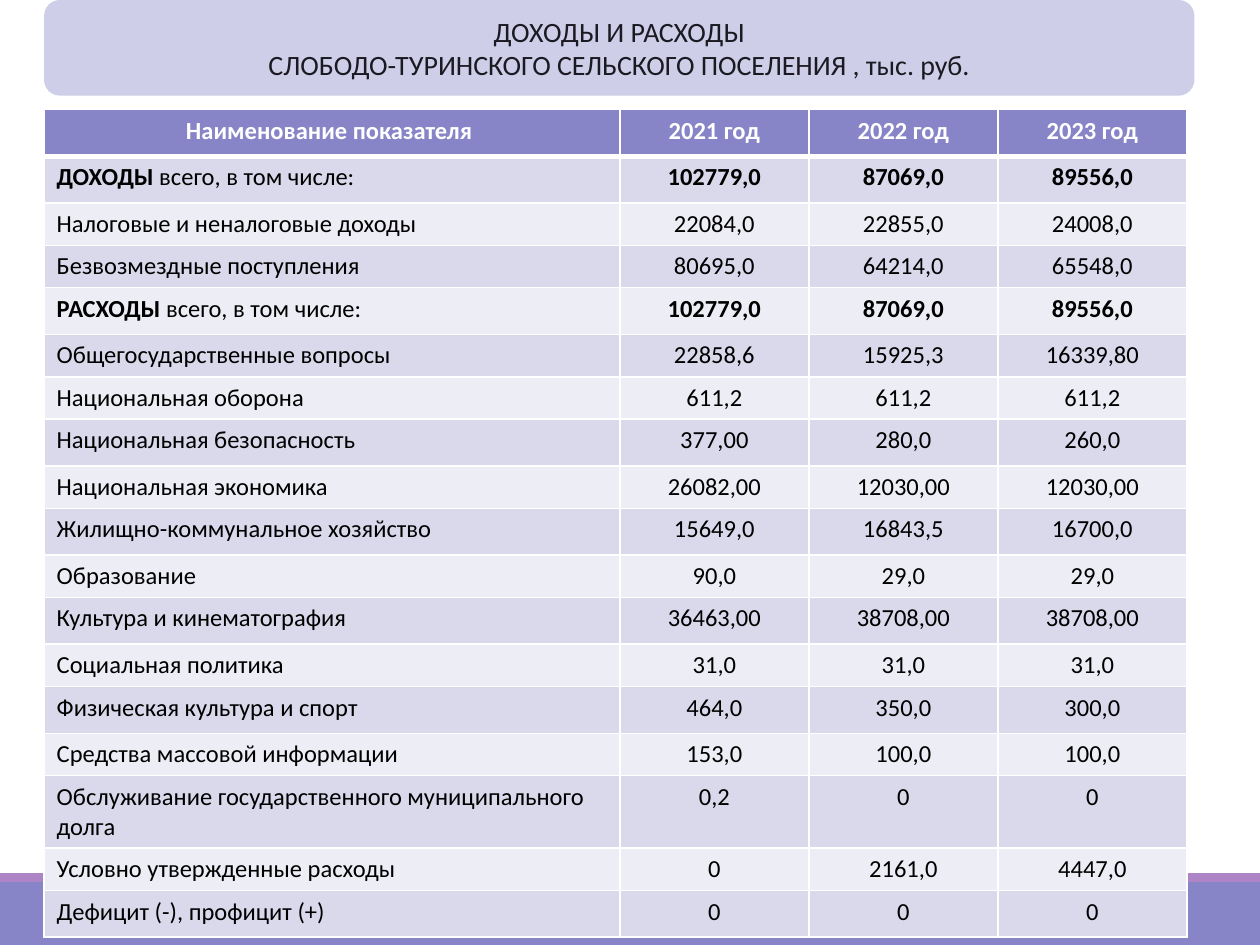
from dataclasses import dataclass
from lxml.etree import SubElement
from pptx import Presentation
from pptx.dml.color import RGBColor
from pptx.enum.shapes import MSO_SHAPE
from pptx.enum.text import MSO_ANCHOR, PP_ALIGN
from pptx.oxml.ns import qn
from pptx.util import Inches, Pt

HEADS = ("Наименование показателя ", "2021 год", "2022 год", "2023 год")
# Row height in grid rows, label, then one value a year; "|" ends a bold lead.
LINES = (
    (3.7, "ДОХОДЫ |всего, в том числе:", "102779,0", "87069,0", "89556,0"),
    (3.3, "Налоговые и неналоговые доходы", "22084,0", "22855,0", "24008,0"),
    (3.1, "Безвозмездные поступления", "80695,0", "64214,0", "65548,0"),
    (3.7, "РАСХОДЫ |всего, в том числе:", "102779,0", "87069,0", "89556,0"),
    (3.1, "Общегосударственные вопросы", "22858,6", "15925,3", "16339,80"),
    (3.0, "Национальная оборона", "611,2", "611,2", "611,2"),
    (3.7, "Национальная безопасность", "377,00", "280,0", "260,0"),
    (2.5, "Национальная экономика", "26082,00", "12030,00", "12030,00"),
    (3.7, "Жилищно-коммунальное хозяйство", "15649,0", "16843,5", "16700,0"),
    (3.3, "Образование", "90,0", "29,0", "29,0"),
    (3.7, "Культура и кинематография", "36463,00", "38708,00", "38708,00"),
    (3.4, "Социальная политика", "31,0", "31,0", "31,0"),
    (3.7, "Физическая культура и спорт", "464,0", "350,0", "300,0"),
    (2.6, "Средства массовой информации", "153,0", "100,0", "100,0"),
    (3.2, "Обслуживание государственного муниципального долга", "0,2", "0", "0"),
    (3.0, "Условно утвержденные расходы", "0", "2161,0", "4447,0"),
    (3.7, "Дефицит (-), профицит (+)", "0", "0", "0"),
)


@dataclass(frozen=True)
class Theme:
    font: str = "Calibri"
    main: str = "8784C7"
    edge: str = "AD84C6"
    pale: str = "CFCEE9"
    bands: tuple = ("EDEDF5", "D9D9EB")
    ink: str = "1B1A22"
    dark: str = "000000"
    light: str = "FFFFFF"
    title: int = 16
    body: int = 14


def grid(n):
    """Turn grid units into a length; the slide is 100 columns by 75 rows."""
    return Inches(n / 10)


class Deck:
    def __init__(self, theme):
        self.theme = theme
        self.file = Presentation()
        self.file.slide_width, self.file.slide_height = grid(100), grid(75)
        self.slide = self.file.slides.add_slide(self.file.slide_layouts[6])

    def style(self, par, size, color, bold=False, align=PP_ALIGN.CENTER):
        par.alignment = align
        for run in par.runs:
            font = run.font
            font.name, font.size, font.bold = self.theme.font, Pt(size), bold
            font.color.rgb = RGBColor.from_string(color)

    def block(self, box, color, kind=MSO_SHAPE.RECTANGLE):
        shape = self.slide.shapes.add_shape(kind, *map(grid, box))
        shape.shadow.inherit = False
        shape.fill.solid()
        shape.fill.fore_color.rgb = RGBColor.from_string(color)
        shape.line.fill.background()
        return shape

    def title(self, box, text):
        frame = self.block(box, self.theme.pale, MSO_SHAPE.ROUNDED_RECTANGLE).text_frame
        frame.word_wrap = True
        frame.vertical_anchor = MSO_ANCHOR.MIDDLE
        frame.text = text
        for par in frame.paragraphs:
            self.style(par, self.theme.title, self.theme.ink)

    def paint(self, cell, color, top=1, low=1):
        """Fill a cell and rule its sides, with top and bottom widths in points."""
        cell.fill.solid()
        cell.fill.fore_color.rgb = RGBColor.from_string(color)
        props = cell._tc.get_or_add_tcPr()
        sides = (("L", 1), ("R", 1), ("T", top), ("B", low))
        for spot, (side, width) in enumerate(sides):
            line = SubElement(props, qn(f"a:ln{side}"), w=str(Pt(width)))
            fill = SubElement(line, qn("a:solidFill"))
            SubElement(fill, qn("a:srgbClr"), val=self.theme.light)
            props.insert(spot, line)

    def label(self, cell, text):
        lead, mark, rest = text.rpartition("|")
        par = cell.text_frame.paragraphs[0]
        par.text = lead or rest
        if mark:
            par.add_run().text = rest
        self.style(par, self.theme.body, self.theme.dark, align=PP_ALIGN.LEFT)
        par.runs[0].font.bold = bool(mark)
        return bool(mark)

    def table(self, box, cols, head, lines):
        look = self.theme
        frame = self.slide.shapes.add_table(len(lines) + 1, len(cols), *map(grid, box))
        table = frame.table
        for col, width in zip(table.columns, cols):
            col.width = grid(width)
        table.rows[0].height = grid(head)
        for c, text in enumerate(HEADS):
            cell = table.cell(0, c)
            cell.text_frame.text = text
            self.style(cell.text_frame.paragraphs[0], look.body, look.light, True)
            self.paint(cell, look.main, low=3)
        for r, (height, name, *values) in enumerate(lines, 1):
            table.rows[r].height = grid(height)
            bold = self.label(table.cell(r, 0), name)
            for c, value in enumerate(values, 1):
                text = table.cell(r, c).text_frame
                text.text = value
                self.style(text.paragraphs[0], look.body, look.dark, bold)
            for cell in table.rows[r].cells:
                self.paint(cell, look.bands[r % 2], top=3 if r == 1 else 1)
        frame.height = grid(box[3])


def main():
    theme = Theme()
    deck = Deck(theme)
    deck.block((0, 70, 100, 5), theme.main)
    deck.block((0, 69.3, 100, 0.7), theme.edge)
    deck.title((3.5, 0, 91.3, 7.6),
               "ДОХОДЫ И РАСХОДЫ\nСЛОБОДО-ТУРИНСКОГО СЕЛЬСКОГО ПОСЕЛЕНИЯ , тыс. руб.")
    deck.table((3.5, 8.7, 90.6, 65.2), (45.7, 15, 15, 15), 3.7, LINES)
    deck.file.save("out.pptx")


if __name__ == "__main__":
    main()
